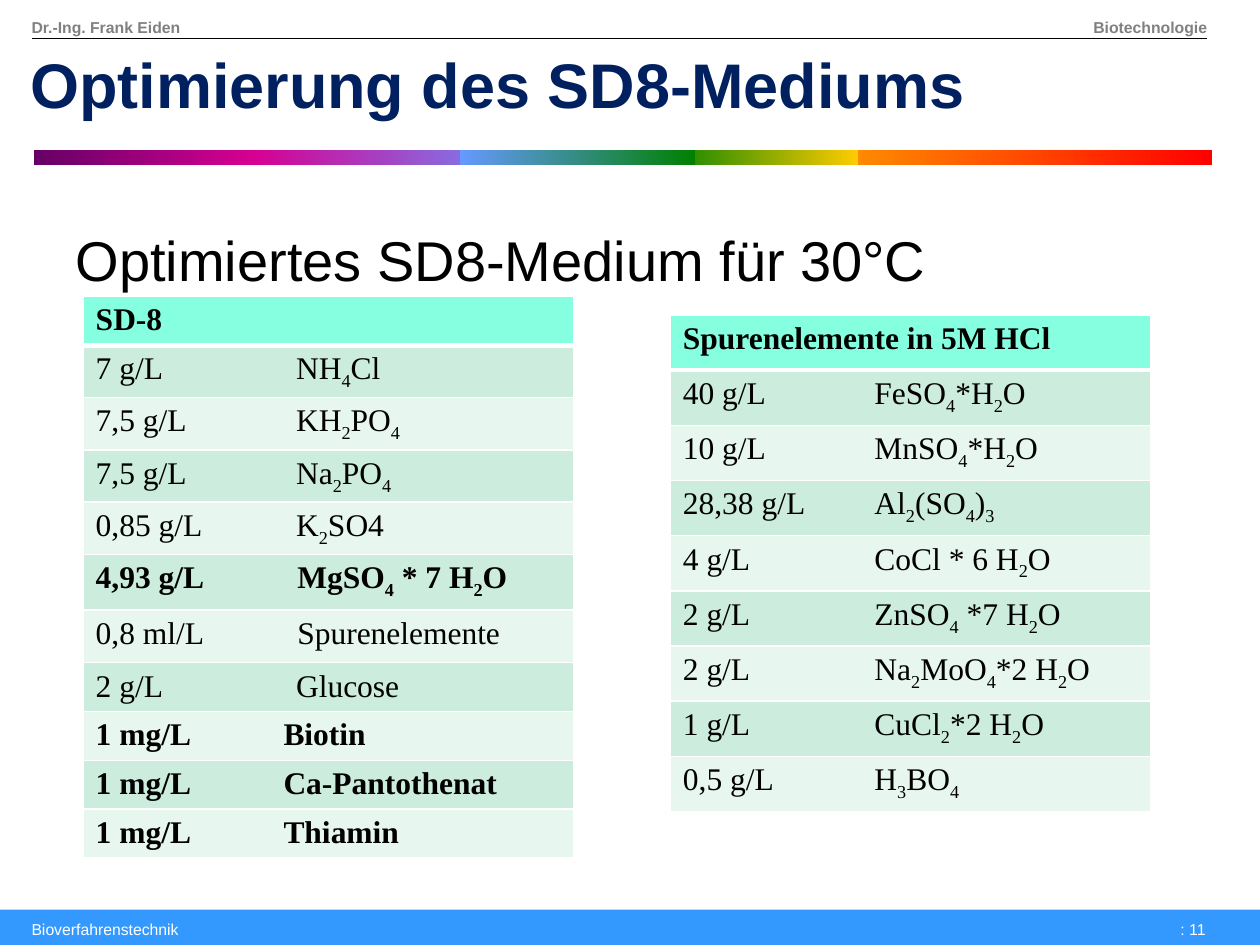
from dataclasses import dataclass
from itertools import cycle

from lxml.etree import SubElement
from pptx import Presentation
from pptx.dml.color import RGBColor
from pptx.enum.shapes import MSO_CONNECTOR as Connector, MSO_SHAPE as Shape
from pptx.enum.text import MSO_ANCHOR as Anchor, MSO_AUTO_SIZE as AutoSize, PP_ALIGN as Align
from pptx.oxml.ns import qn
from pptx.util import Inches, Pt

COLUMNS, ROWS = 100, 75
WIDTH, HEIGHT = Inches(10), Inches(7.5)


@dataclass(frozen=True)
class Theme:
    """Colours, fonts and type sizes of the slide."""
    sans: str = "Arial"
    serif: str = "Times New Roman"
    title_size: int = 36
    body_size: int = 32
    table_size: int = 18
    small_size: int = 9
    navy: str = "002060"
    black: str = "000000"
    grey: str = "808080"
    white: str = "FFFFFF"
    footer: str = "3399FF"
    table_head: str = "85FFE0"
    bands: tuple = ("CCECDE", "E7F6EF")


@dataclass(frozen=True)
class Recipe:
    """A medium with its place on the grid and its ingredients."""
    heading: str
    place: tuple
    heights: list
    ingredients: list


THEME = Theme()

SD8 = Recipe("SD-8", (6.6, 23.5, 38.9), [3.9] + [4.15] * 4 + [4.4, 4.2] + [3.88] * 4, [
    ("7 g/L", "NH_4Cl", False, 15.9),
    ("7,5 g/L", "KH_2PO_4", False, 15.9),
    ("7,5 g/L", "Na_2PO_4", False, 15.9),
    ("0,85 g/L", "K_2SO4", False, 15.9),
    ("4,93 g/L", "MgSO_4 * 7 H_2O", True, 16),
    ("0,8 ml/L", "Spurenelemente", False, 16),
    ("2 g/L", "Glucose", False, 15.9),
    ("1 mg/L", "Biotin", True, 14.9),
    ("1 mg/L", "Ca-Pantothenat", True, 14.9),
    ("1 mg/L", "Thiamin", True, 14.9),
])

TRACE_ELEMENTS = Recipe("Spurenelemente in 5M HCl", (53.2, 25, 38.1), [4.38] * 9, [
    (amount, compound, False, 15.2) for amount, compound in (
        ("40 g/L", "FeSO_4*H_2O"),
        ("10 g/L", "MnSO_4*H_2O"),
        ("28,38 g/L", "Al_2(SO_4)_3"),
        ("4 g/L", "CoCl * 6 H_2O"),
        ("2 g/L", "ZnSO_4 *7 H_2O"),
        ("2 g/L", "Na_2MoO_4*2 H_2O"),
        ("1 g/L", "CuCl_2*2 H_2O"),
        ("0,5 g/L", "H_3BO_4"),
    )
])

RAINBOW = [
    (54.7, 41.5, "FFCC00", "FF0000"),
    (52.1, 16, "008000", "FFCC00"),
    (2.7, 17.4, "660066", "D60093"),
    (20.1, 23.4, "D60093", "6699FF"),
    (36.5, 18.7, "6699FF", "008000"),
]


def x(columns):
    """Turn grid columns into a length."""
    return round(WIDTH * columns / COLUMNS)


def y(rows):
    """Turn grid rows into a length."""
    return round(HEIGHT * rows / ROWS)


def area(left, top, width, height):
    """Turn a grid area into left, top, width and height."""
    return x(left), y(top), x(width), y(height)


def apply(target, **values):
    """Set attributes from format values."""
    for name, value in values.items():
        setattr(target, name, value)


def write(paragraph, text, size, colour, font=THEME.sans, bold=False):
    """Write text in which an underscore lowers the next character."""
    start, *lowered = text.split("_")
    pieces = [(start, False)]
    for part in lowered:
        pieces += [(part[0], True), (part[1:], False)]
    for piece, low in pieces:
        if piece:
            run = paragraph.add_run()
            run.text = piece
            apply(run.font, size=Pt(size), name=font, bold=bold)
            run.font.color.rgb = RGBColor.from_string(colour)
            if low:
                run.font._element.set("baseline", "-25000")


def add_tab(paragraph, columns, side="l"):
    """Give a paragraph one tab stop."""
    stops = SubElement(paragraph._p.get_or_add_pPr(), qn("a:tabLst"))
    SubElement(stops, qn("a:tab"), pos=str(x(columns)), algn=side)


def add_label(slide, place, text, colour, bold=False, inset=0, right_tab=None):
    """Add a line of small text."""
    frame = slide.shapes.add_textbox(*area(*place)).text_frame
    apply(frame, word_wrap=True, margin_left=x(inset))
    if right_tab:
        add_tab(frame.paragraphs[0], right_tab, "r")
    write(frame.paragraphs[0], text, THEME.small_size, colour, bold=bold)


def add_bar(slide, place, colours):
    """Add a borderless bar in one colour or a gradient of two."""
    bar = slide.shapes.add_shape(Shape.RECTANGLE, *area(*place))
    bar.shadow.inherit = False
    bar.line.fill.background()
    if len(colours) == 1:
        bar.fill.solid()
        bar.fill.fore_color.rgb = RGBColor.from_string(colours[0])
        return
    bar.fill.gradient()
    bar.fill.gradient_angle = 0
    for stop, colour in zip(bar.fill.gradient_stops, colours):
        stop.color.rgb = RGBColor.from_string(colour)


def add_rule(slide, left, right, row):
    """Add a thin horizontal line."""
    rule = slide.shapes.add_connector(Connector.STRAIGHT, x(left), y(row), x(right), y(row))
    rule.line.width = Pt(0.75)
    rule.line.color.rgb = RGBColor.from_string(THEME.black)
    SubElement(rule._element.spPr, qn("a:effectLst"))


def fill_placeholder(holder, place, text, size, colour, bold=False, anchor=Anchor.TOP):
    """Move a placeholder and write its single line."""
    apply(holder, **dict(zip(("left", "top", "width", "height"), area(*place))))
    frame = holder.text_frame
    apply(frame, auto_size=AutoSize.NONE, vertical_anchor=anchor, word_wrap=True)
    line = frame.paragraphs[0]
    apply(line, alignment=Align.LEFT, space_before=Pt(0))
    SubElement(line._p.get_or_add_pPr(), qn("a:buNone"))
    write(line, text, size, colour, bold=bold)


def style_cell(cell, colour, bottom):
    """Give a cell white borders, a fill and a tight lower margin."""
    apply(cell, margin_top=y(0.5), margin_bottom=y(0.15))
    properties = cell._tc.get_or_add_tcPr()
    for side, points in (("L", 1), ("R", 1), ("T", 1), ("B", bottom)):
        border = SubElement(properties, qn(f"a:ln{side}"), w=str(Pt(points)))
        paint = SubElement(border, qn("a:solidFill"))
        SubElement(paint, qn("a:srgbClr"), val=THEME.white)
    cell.fill.solid()
    cell.fill.fore_color.rgb = RGBColor.from_string(colour)


def add_recipe(slide, recipe):
    """Add a recipe as a one-column table."""
    place = area(*recipe.place, sum(recipe.heights))
    table = slide.shapes.add_table(len(recipe.heights), 1, *place).table
    table.horz_banding = False
    for row, height in zip(table.rows, recipe.heights):
        row.height = y(height)
    text_format = dict(size=THEME.table_size, colour=THEME.black, font=THEME.serif)
    head = table.cell(0, 0)
    style_cell(head, THEME.table_head, 3)
    write(head.text_frame.paragraphs[0], recipe.heading, bold=True, **text_format)
    bands = cycle(THEME.bands)
    for index, (amount, compound, bold, tab) in enumerate(recipe.ingredients, 1):
        cell = table.cell(index, 0)
        style_cell(cell, next(bands), 1)
        line = cell.text_frame.paragraphs[0]
        add_tab(line, tab)
        write(line, f"{amount}\t{compound}", bold=bold, **text_format)


def main():
    """Build the slide and save it."""
    deck = Presentation()
    apply(deck, slide_width=WIDTH, slide_height=HEIGHT)
    slide = deck.slides.add_slide(deck.slide_layouts[1])
    add_bar(slide, (0, 72.2, 100, 2.8), [THEME.footer])
    add_label(slide, (2.5, 0.9, 95.1, 2.5), "Dr.-Ing. Frank Eiden\tBiotechnologie",
              THEME.grey, bold=True, right_tab=93.3)
    add_rule(slide, 2.5, 95.8, 3.05)
    add_label(slide, (2.5, 72.5, 30.2, 2.5), "Bioverfahrenstechnik", THEME.white)
    add_label(slide, (92.7, 72.5, 5.2, 2.5), ": 11", THEME.white, inset=1)
    fill_placeholder(slide.shapes.title, (1.4, 2, 85, 9.2), "Optimierung des SD8-Mediums",
                     THEME.title_size, THEME.navy, bold=True, anchor=Anchor.MIDDLE)
    for left, width, *colours in RAINBOW:
        add_bar(slide, (left, 11.9, width, 1.2), colours)
    fill_placeholder(slide.placeholders[1], (5, 17.4, 90, 5.8), "Optimiertes SD8-Medium für 30°C",
                     THEME.body_size, THEME.black)
    body = slide.placeholders[1].text_frame.paragraphs[0]._p.pPr
    body.set("marL", str(x(3.8)))
    body.set("indent", str(-x(3.8)))
    for recipe in (SD8, TRACE_ELEMENTS):
        add_recipe(slide, recipe)
    deck.save("out.pptx")


if __name__ == "__main__":
    main()
